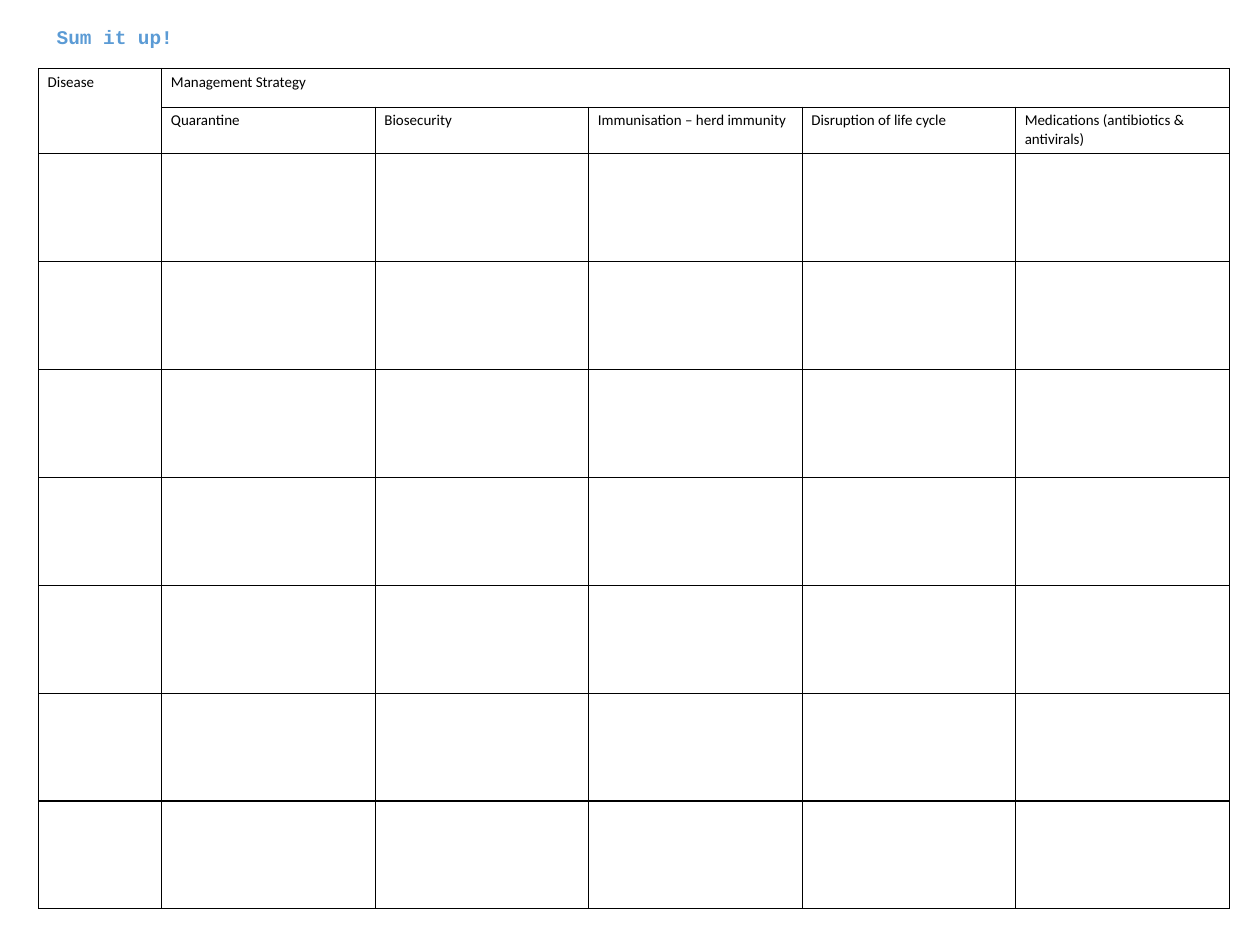
from lxml.etree import SubElement
from pptx import Presentation
from pptx.dml.color import RGBColor
from pptx.enum.text import MSO_ANCHOR, PP_ALIGN
from pptx.oxml.ns import qn
from pptx.util import Inches, Pt

STRATEGIES = [
    "Quarantine",
    "Biosecurity",
    "Immunisation – herd immunity",
    "Disruption of life cycle",
    "Medications (antibiotics & antivirals)",
]
DISEASE_ROWS = 7
HEADER_HEIGHTS = [0.43, 0.52]
DISEASE_WIDTH = 1.37


def color(value):
    return RGBColor.from_string(value)


def add_title(page, left, top, width, height):
    title = page.shapes.title
    title.left, title.top = Inches(left), Inches(top)
    title.width, title.height = Inches(width), Inches(height)
    frame = title.text_frame
    frame.text = "Sum it up!"
    frame.vertical_anchor = MSO_ANCHOR.MIDDLE
    frame.margin_left = frame.margin_right = Inches(0.13)
    frame.margin_top = frame.margin_bottom = Inches(0.06)
    para = frame.paragraphs[0]
    para.alignment = PP_ALIGN.LEFT
    para.line_spacing = 0.9
    para.font.name = "Courier New"
    para.font.size = Pt(15.5)
    para.font.bold = True
    para.font.color.rgb = color("5B9BD5")


def add_borders(cell, value):
    properties = cell._tc.get_or_add_tcPr()
    for index, side in enumerate(("lnL", "lnR", "lnT", "lnB")):
        line = SubElement(properties, qn(f"a:{side}"), w=str(Pt(1)))
        fill = SubElement(line, qn("a:solidFill"))
        SubElement(fill, qn("a:srgbClr"), val=value)
        properties.insert(index, line)


def format_cell(cell):
    cell.fill.background()
    add_borders(cell, "000000")
    font = cell.text_frame.paragraphs[0].font
    font.name = "Calibri"
    font.size = Pt(12)
    font.bold = False
    font.color.rgb = color("000000")


def add_strategy_table(page, left, top, width, height):
    row_count = len(HEADER_HEIGHTS) + DISEASE_ROWS
    column_count = 1 + len(STRATEGIES)
    table = page.shapes.add_table(
        row_count, column_count,
        Inches(left), Inches(top), Inches(width), Inches(height),
    ).table
    table.first_row = table.horz_banding = False

    strategy_width = (width - DISEASE_WIDTH) / len(STRATEGIES)
    widths = [DISEASE_WIDTH] + [strategy_width] * len(STRATEGIES)
    for column, column_width in zip(table.columns, widths):
        column.width = Inches(column_width)

    disease_height = (height - sum(HEADER_HEIGHTS)) / DISEASE_ROWS
    heights = HEADER_HEIGHTS + [disease_height] * DISEASE_ROWS
    for row, row_height in zip(table.rows, heights):
        row.height = Inches(row_height)

    table.cell(0, 0).merge(table.cell(1, 0))
    table.cell(0, 1).merge(table.cell(0, column_count - 1))
    table.cell(0, 0).text = "Disease"
    table.cell(0, 1).text = "Management Strategy"
    for index, strategy in enumerate(STRATEGIES, start=1):
        table.cell(1, index).text = strategy
    for cell in table.iter_cells():
        format_cell(cell)


def main():
    deck = Presentation()
    deck.slide_width, deck.slide_height = Inches(14), Inches(10.5)
    page = deck.slides.add_slide(deck.slide_layouts[5])
    add_title(page, 0.5, 0.12, 3, 0.6)
    add_strategy_table(page, 0.43, 0.76, 13.23, 9.34)
    deck.save("out.pptx")


if __name__ == "__main__":
    main()
